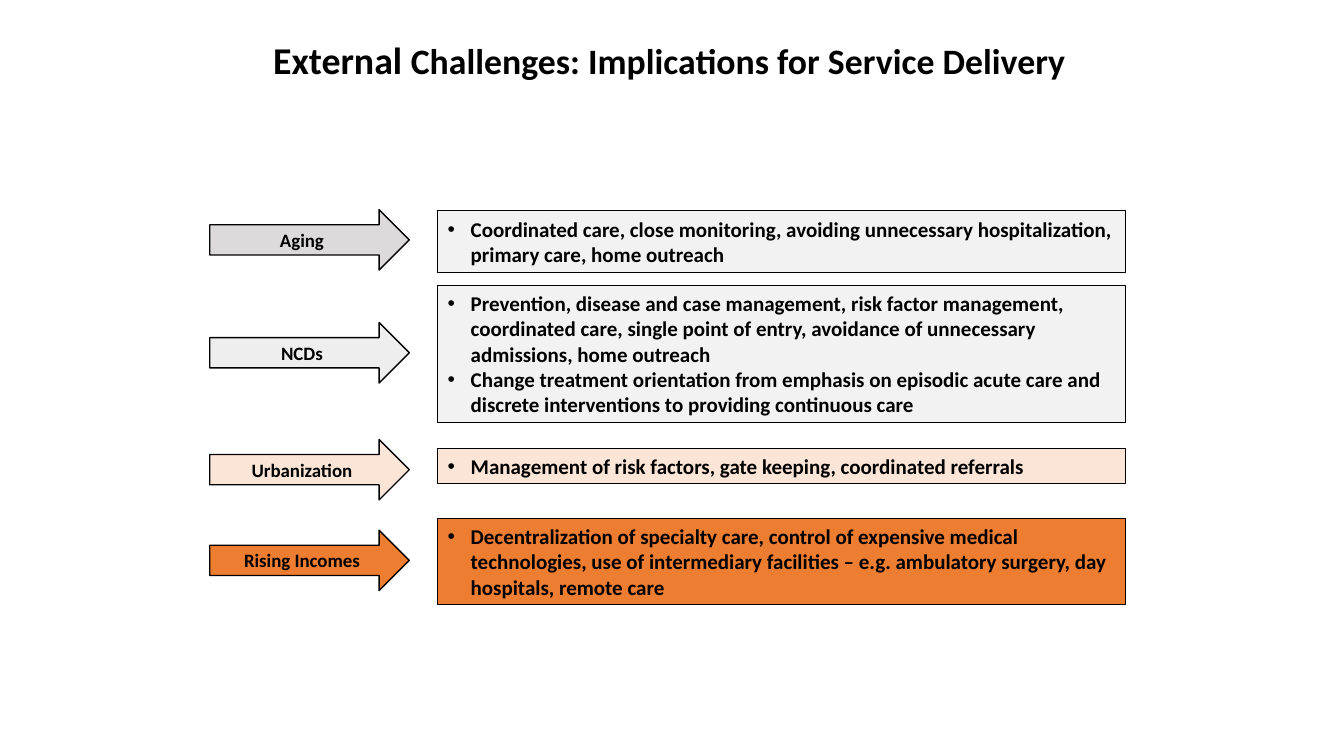
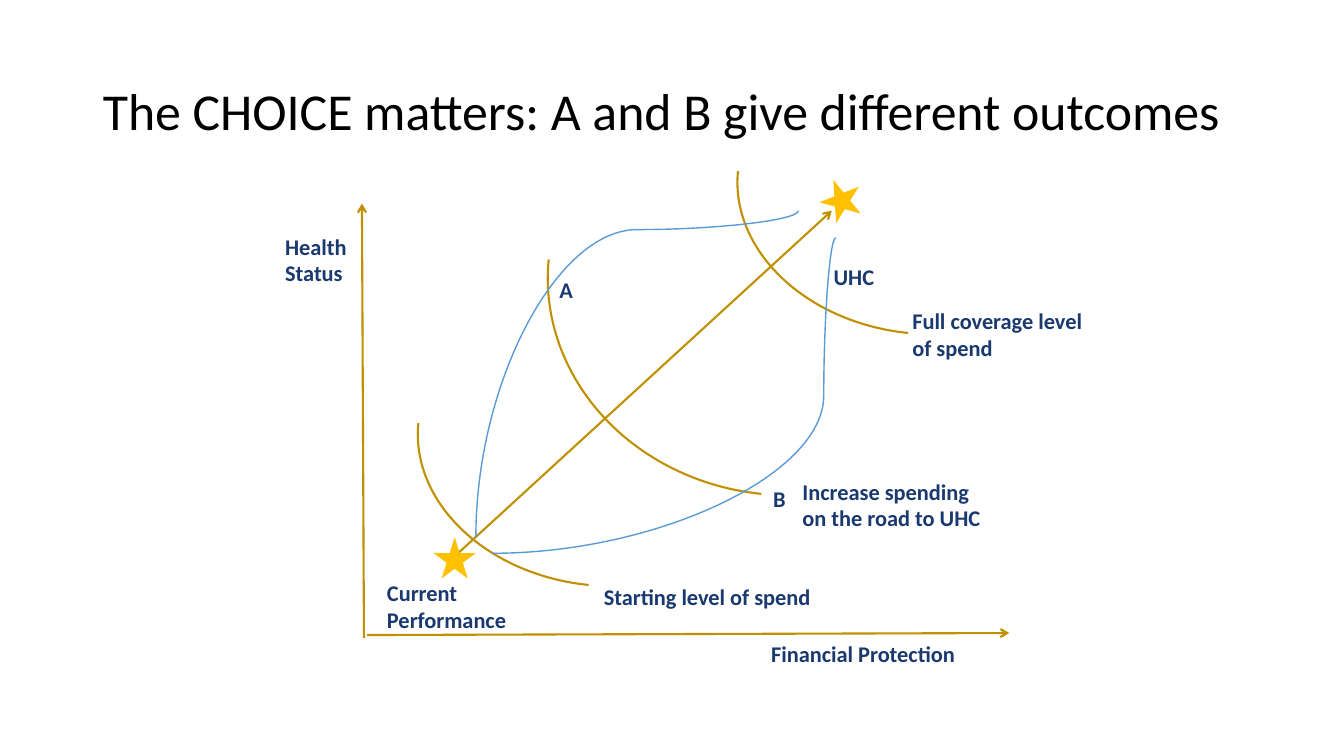
from lxml import etree
from pptx import Presentation
from pptx.dml.color import RGBColor
from pptx.enum import shapes, text
from pptx.oxml import ns
from pptx.util import Inches, Pt

FONT = "Calibri"
BLACK = RGBColor(0x00, 0x00, 0x00)
NAVY = RGBColor(0x1A, 0x39, 0x6E)
GOLD = RGBColor(0xBF, 0x90, 0x00)
YELLOW = RGBColor(0xFF, 0xC0, 0x00)
BLUE = RGBColor(0x5B, 0x9B, 0xD5)
PALE = RGBColor(0xF2, 0xF2, 0xF2)
SILVER = RGBColor(0xED, 0xED, 0xED)
GREY = RGBColor(0xDC, 0xDA, 0xDA)
PEACH = RGBColor(0xFB, 0xE5, 0xD6)
ORANGE = RGBColor(0xED, 0x7D, 0x31)

SHAPE = shapes.MSO_SHAPE
LINE = shapes.MSO_CONNECTOR
ALIGN = text.PP_ALIGN

# Challenge, arrow top, (arrow fill, opacity), box top, box height, (box fill, opacity), implications
CHALLENGES = [
    ("Aging", 2.08, (GREY, 100), 2.09, 0.61, (PALE, 100), [
        "Coordinated care, close monitoring, avoiding unnecessary hospitalization, "
        "primary care, home outreach"]),
    ("NCDs", 3.2, (SILVER, 89), 2.83, 1.36, (SILVER, 70), [
        "Prevention, disease and case management, risk factor management, coordinated care, "
        "single point of entry, avoidance of unnecessary admissions, home outreach",
        "Change treatment orientation from emphasis on episodic acute care and discrete "
        "interventions to providing continuous care"]),
    ("Urbanization", 4.36, (PEACH, 100), 4.45, 0.35, (PEACH, 100), [
        "Management of risk factors, gate keeping, coordinated referrals"]),
    ("Rising Incomes", 5.26, (ORANGE, 100), 5.14, 0.86, (ORANGE, 100), [
        "Decentralization of specialty care, control of expensive medical technologies, "
        "use of intermediary facilities – e.g. ambulatory surgery, day hospitals, remote care"]),
]
ARROW_LEFT, ARROW_WIDTH, ARROW_HEIGHT = 2.08, 1.98, 0.6
BOX_LEFT, BOX_WIDTH = 4.34, 6.82
BULLET_INDENT = Inches(0.23)

# Begin and end points
ARROW_LINES = [
    ((3.64, 6.3), (10.01, 6.28)),
    ((3.61, 6.33), (3.59, 2.02)),
    ((4.53, 5.5), (8.25, 2.09)),
]
# Begin and end before rotation, rotation, bend position
PATHS_TO_UHC = [
    ((7.94, 5.31), (4.7, 2.11), 90, 0.942),
    ((4.88, 5.49), (8.29, 2.36), 0, 0.965),
]
SPEND_ARCS = [(4.14, 2.95, 3.68, 2.86), (5.43, 0.7, 4.66, 4.21), (7.31, 0.45, 3.68, 2.86)]
ARC_ROTATION = 185.7
STARS = [(4.3, 5.33, 0), (8.13, 1.77, 338.5)]
# Paragraphs, area, wrap
LABELS = [
    (["Health Status"], (2.73, 2.26, 1.1, 0.64), True),
    (["Financial Protection"], (7.55, 6.3, 2.33, 0.37), True),
    (["Current Performance"], (3.74, 5.7, 2.06, 0.64), True),
    (["UHC"], (8.17, 2.56, 1.84, 0.37), True),
    (["Starting level of spend"], (5.89, 5.74, 2.28, 0.37), False),
    (["Increase spending", "on the road to UHC"], (7.86, 4.69, 3.12, 0.64), True),
    (["Full coverage level", "of spend"], (8.95, 3, 2.22, 0.64), True),
    (["A"], (5.45, 2.69, 0.34, 0.37), False),
    (["B"], (7.57, 4.76, 0.33, 0.37), False),
]


def inches(values):
    return [Inches(value) for value in values]


def add_xml(parent, tag, **attributes):
    return etree.SubElement(parent, ns.qn(tag), attributes)


def style_font(font, size, colour, bold):
    font.name, font.size, font.bold = FONT, Pt(size), bold
    font.color.rgb = colour


def write(box, paragraphs, size, colour, align=ALIGN.LEFT):
    frame = box.text_frame
    frame.text = "\n".join(paragraphs)
    frame.word_wrap = True
    for para in frame.paragraphs:
        para.alignment = align
        for span in para.runs:
            style_font(span.font, size, colour, True)


def add_page(deck, area, spans, align, bold):
    """Add a page whose title is made of (words, size) spans."""
    page = deck.slides.add_slide(deck.slide_layouts.get_by_name("Title Only"))
    title = page.shapes.title
    title.left, title.top, title.width, title.height = inches(area)
    frame = title.text_frame
    frame.auto_size = text.MSO_AUTO_SIZE.NONE
    frame.vertical_anchor = text.MSO_ANCHOR.MIDDLE
    para = frame.paragraphs[0]
    para.alignment, para.line_spacing = align, 0.9
    for words, size in spans:
        span = para.add_run()
        span.text = words
        style_font(span.font, size, BLACK, bold)
    return page


def add_figure(page, kind, area, fill=None, opacity=100, line=None, width=1):
    figure = page.shapes.add_shape(kind, *inches(area))
    figure.shadow.inherit = False
    if fill is None:
        figure.fill.background()
    else:
        figure.fill.solid()
        figure.fill.fore_color.rgb = fill
        if opacity < 100:
            colour = figure._element.spPr.find(ns.qn("a:solidFill"))[0]
            add_xml(colour, "a:alpha", val=str(opacity * 1000))
    if line is None:
        figure.line.fill.background()
    else:
        figure.line.color.rgb = line
        figure.line.width = Pt(width)
    return figure


def add_line(page, kind, begin, end, colour, width, arrow=False):
    line = page.shapes.add_connector(kind, *inches(begin + end))
    line.line.color.rgb = colour
    line.line.width = Pt(width)
    properties = line._element.spPr
    if arrow:
        add_xml(properties.find(ns.qn("a:ln")), "a:tailEnd", type="arrow")
    add_xml(properties, "a:effectLst")
    return line


def add_bullets(box):
    for para in box.text_frame.paragraphs:
        properties = para._p.get_or_add_pPr()
        properties.set("marL", str(BULLET_INDENT))
        properties.set("indent", str(-BULLET_INDENT))
        add_xml(properties, "a:buFont", typeface="Arial")
        add_xml(properties, "a:buChar", char="•")


def build_challenges(deck):
    page = add_page(deck, (1.99, 0.34, 9.3, 0.56), [
        ("External ", 27), ("Challenges: Implications for Service Delivery", 25.5)],
        ALIGN.CENTER, True)
    for name, arrow_top, arrow_fill, top, height, box_fill, implications in CHALLENGES:
        box = add_figure(page, SHAPE.RECTANGLE, (BOX_LEFT, top, BOX_WIDTH, height),
                         *box_fill, line=BLACK, width=0.75)
        write(box, implications, 15, BLACK)
        add_bullets(box)
        box.text_frame.auto_size = text.MSO_AUTO_SIZE.SHAPE_TO_FIT_TEXT
        arrow = add_figure(page, SHAPE.RIGHT_ARROW,
                           (ARROW_LEFT, arrow_top, ARROW_WIDTH, ARROW_HEIGHT),
                           *arrow_fill, line=BLACK)
        write(arrow, [name], 13.5, BLACK, ALIGN.CENTER)


def build_choice(deck):
    page = add_page(deck, (0.92, 0.4, 11.5, 1.45), [
        ("The CHOICE matters: A and B give different outcomes", 37)], ALIGN.LEFT, False)
    for begin, end in ARROW_LINES:
        add_line(page, LINE.STRAIGHT, begin, end, GOLD, 1.5, arrow=True)
    for area in SPEND_ARCS:
        add_figure(page, SHAPE.ARC, area, line=GOLD, width=1.5).rotation = ARC_ROTATION
    for left, top, rotation in STARS:
        star = add_figure(page, SHAPE.STAR_5_POINT, (left, top, 0.42, 0.41), YELLOW)
        star.rotation = rotation
    for begin, end, rotation, bend in PATHS_TO_UHC:
        curve = add_line(page, LINE.CURVE, begin, end, BLUE, 1)
        properties = curve._element.spPr
        properties.find(ns.qn("a:xfrm")).set("rot", str(rotation * 60000))
        guides = properties.find(ns.qn("a:prstGeom")).find(ns.qn("a:avLst"))
        add_xml(guides, "a:gd", name="adj1", fmla=f"val {round(bend * 100000)}")
    for paragraphs, area, wrap in LABELS:
        label = page.shapes.add_textbox(*inches(area))
        write(label, paragraphs, 16, NAVY)
        label.text_frame.word_wrap = wrap
        label.text_frame.auto_size = text.MSO_AUTO_SIZE.SHAPE_TO_FIT_TEXT


def main():
    deck = Presentation()
    deck.slide_width, deck.slide_height = Inches(13.33), Inches(7.5)
    build_challenges(deck)
    build_choice(deck)
    deck.save("out.pptx")


if __name__ == "__main__":
    main()
